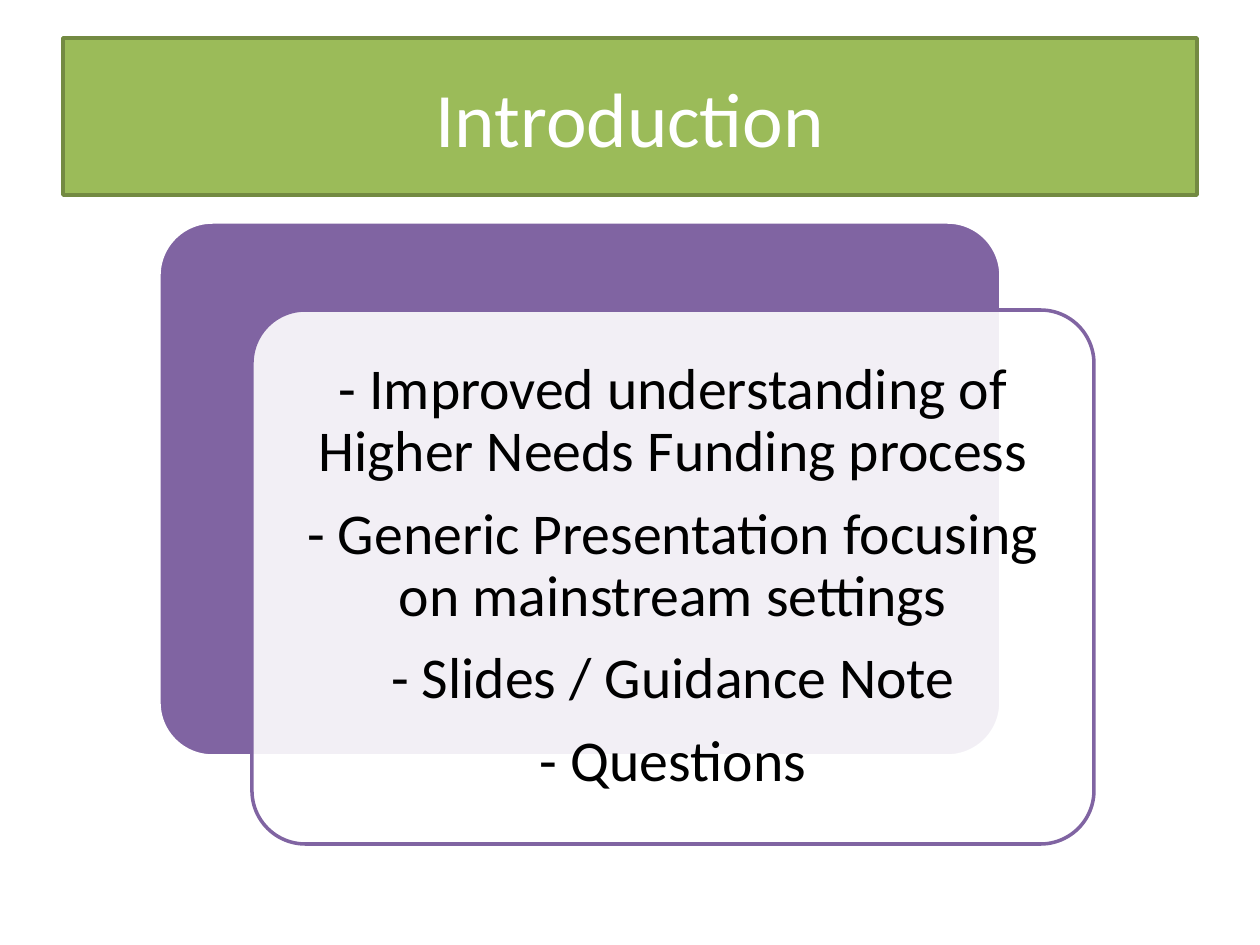
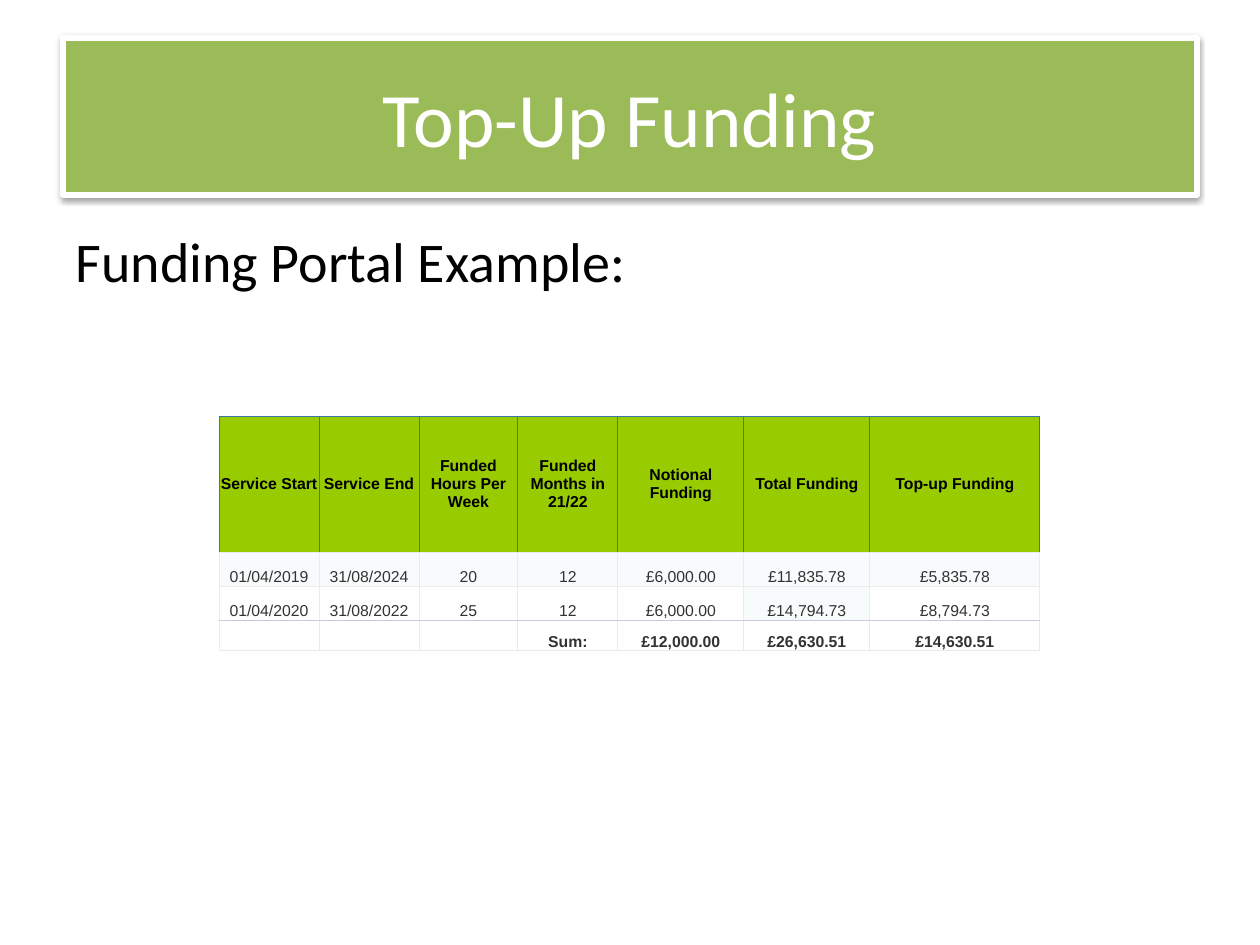
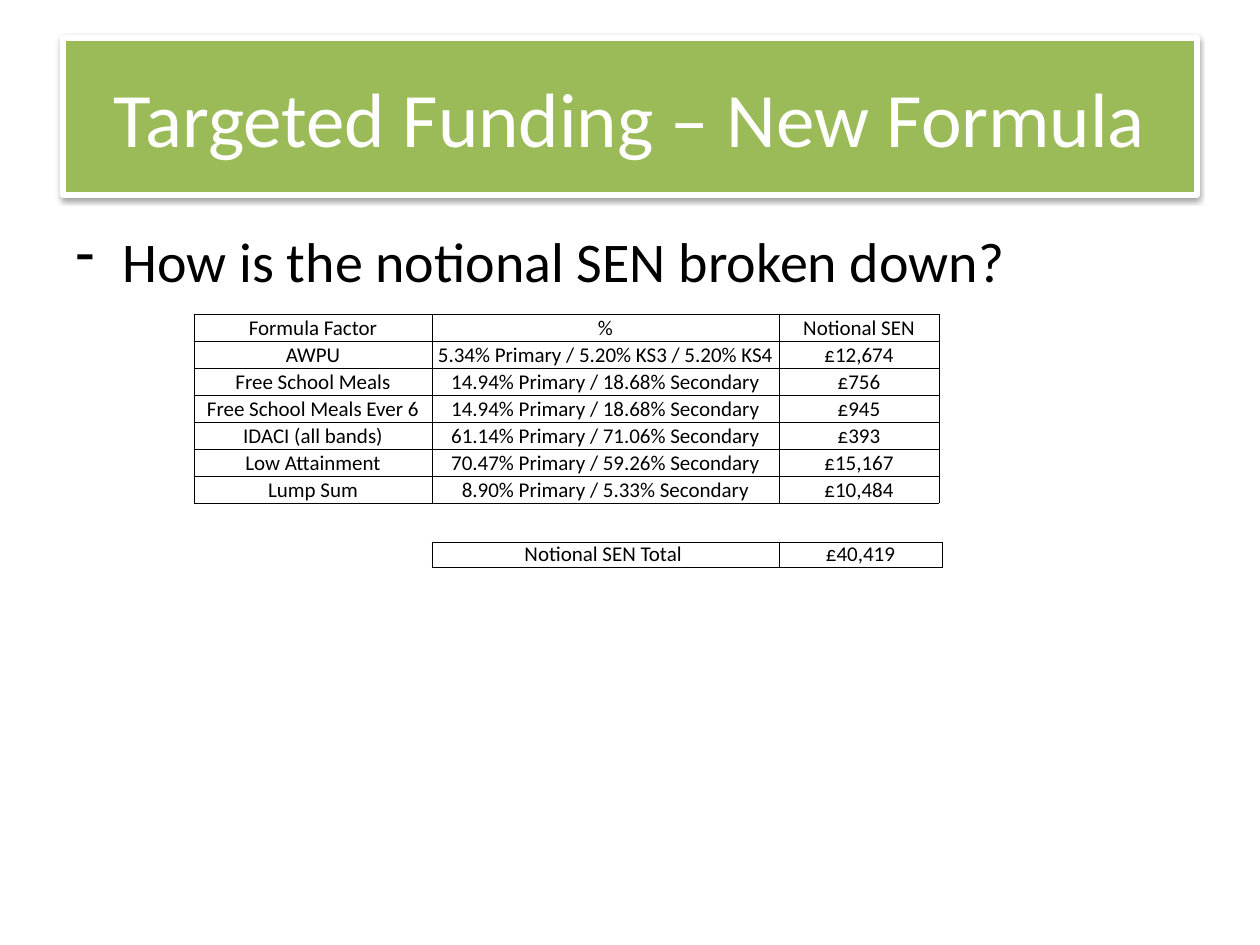
from dataclasses import dataclass

from lxml import etree
from pptx import Presentation
from pptx.dml.color import RGBColor
from pptx.enum.shapes import MSO_SHAPE
from pptx.enum.text import MSO_ANCHOR, MSO_AUTO_SIZE, PP_ALIGN
from pptx.oxml.ns import qn
from pptx.util import Emu, Pt

ROUNDED = MSO_SHAPE.ROUNDED_RECTANGLE
MIDDLE, BOTTOM = MSO_ANCHOR.MIDDLE, MSO_ANCHOR.BOTTOM
CENTER = PP_ALIGN.CENTER
NO_AUTOFIT = MSO_AUTO_SIZE.NONE

# Shared look
PX_PER_INCH = 126
LAYOUT_LIST = 1
TITLE_BOX = (63, 38, 1134, 157)
BODY_BOX = (63, 220, 1134, 624)
HANGING_INDENT = 47
COLORS = {
    "white": "FFFFFF",
    "black": "000000",
    "band": "9BBB59",
    "band_edge": "738A42",
    "purple": "8064A2",
    "header": "99CC00",
    "header_edge": "3877A6",
    "tint": "F8FBFC",
    "grid": "EBEBEB",
    "sum_edge": "CAC9D9",
    "figures": "333333",
}


@dataclass(frozen=True)
class Card:
    box: tuple[int, int, int, int]
    fill: str
    line: str
    opacity: int = 100


@dataclass(frozen=True)
class RowStyle:
    font: str
    size: int
    color: str
    edges: tuple[str, str, str, str]  # left, right, top, bottom
    fill: str | None = None
    bold: bool = False
    anchor: MSO_ANCHOR = BOTTOM


@dataclass(frozen=True)
class TableSpec:
    left: int
    top: int
    widths: tuple[int, ...]
    heights: tuple[int, ...]
    rows: list[tuple[str, ...]]
    styles: list[RowStyle]


def px(length: int) -> Emu:
    return Emu(round(length * 914400 / PX_PER_INCH))


def rgb(name: str) -> RGBColor:
    return RGBColor.from_string(COLORS[name])


def place(shape, box: tuple[int, int, int, int]) -> None:
    shape.left, shape.top, shape.width, shape.height = map(px, box)


def format_runs(paragraph, font: str, size: int, color: str, bold: bool = False) -> None:
    for run in paragraph.runs:
        run.font.name = font
        run.font.size = Pt(size)
        run.font.bold = bold
        run.font.color.rgb = rgb(color)


def set_line(shape, color: str, width: int) -> None:
    shape.line.color.rgb = rgb(color)
    shape.line.width = Pt(width)


def add_color(parent, color: str, opacity: int = 100) -> None:
    element = etree.SubElement(parent, qn("a:srgbClr"), val=COLORS[color])
    if opacity < 100:
        etree.SubElement(element, qn("a:alpha"), val=str(opacity * 1000))


# Titles and lists
def add_shadow(shape) -> None:
    effects = etree.SubElement(shape.element.spPr, qn("a:effectLst"))
    shadow = etree.SubElement(
        effects, qn("a:outerShdw"), blurRad=str(Pt(3.1)), dist=str(Pt(1.6)),
        dir="5400000", rotWithShape="0")
    add_color(shadow, "black", 38)


def add_titled_slide(presentation, title: str, raised: bool = True):
    slide = presentation.slides.add_slide(presentation.slide_layouts[LAYOUT_LIST])
    band = slide.shapes.title
    place(band, TITLE_BOX)
    band.fill.solid()
    band.fill.fore_color.rgb = rgb("band")
    if raised:
        set_line(band, "white", 3)
        add_shadow(band)
    else:
        set_line(band, "band_edge", 2)
    band.text_frame.text = title
    band.text_frame.auto_size = NO_AUTOFIT
    band.text_frame.vertical_anchor = MIDDLE
    paragraph = band.text_frame.paragraphs[0]
    paragraph.alignment = CENTER
    format_runs(paragraph, "Calibri", 44, "white")
    return slide


def fill_body(slide, lines: list[str], box: tuple[int, int, int, int] = BODY_BOX,
              size: int = 32, bullet: str = ""):
    body = slide.placeholders[1]
    place(body, box)
    body.text_frame.text = "\n".join(lines)
    body.text_frame.auto_size = NO_AUTOFIT
    for paragraph in body.text_frame.paragraphs:
        format_runs(paragraph, "Calibri", size, "black")
        properties = paragraph._p.get_or_add_pPr()
        indent = px(HANGING_INDENT) if bullet else 0
        properties.set("marL", str(indent))
        properties.set("indent", str(-indent))
        if bullet:
            etree.SubElement(properties, qn("a:buFontTx"))
            etree.SubElement(properties, qn("a:buChar"), char=bullet)
        else:
            etree.SubElement(properties, qn("a:buNone"))
    return body


def add_card(slide, card: Card) -> None:
    shape = slide.shapes.add_shape(ROUNDED, *map(px, card.box))
    shape.adjustments[0] = 0.1
    shape.shadow.inherit = False
    shape.fill.solid()
    shape.fill.fore_color.rgb = rgb(card.fill)
    if card.opacity < 100:
        color = shape.element.spPr.find(qn("a:solidFill")).find(qn("a:srgbClr"))
        etree.SubElement(color, qn("a:alpha"), val=str(card.opacity * 1000))
    set_line(shape, card.line, 2)


# Tables
def set_edges(cell, edges: tuple[str, str, str, str]) -> None:
    properties = cell._tc.get_or_add_tcPr()
    for side, color in zip("LRTB", edges):
        line = etree.SubElement(properties, qn(f"a:ln{side}"), w=str(Pt(0.5)))
        add_color(etree.SubElement(line, qn("a:solidFill")), color)


def fill_cell(cell, text: str, style: RowStyle) -> None:
    cell.margin_left = cell.margin_right = cell.margin_top = cell.margin_bottom = 0
    cell.vertical_anchor = style.anchor
    set_edges(cell, style.edges)
    if style.fill:
        cell.fill.solid()
        cell.fill.fore_color.rgb = rgb(style.fill)
    else:
        cell.fill.background()
    paragraph = cell.text_frame.paragraphs[0]
    paragraph.alignment = CENTER
    if text:
        paragraph.text = text
        format_runs(paragraph, style.font, style.size, style.color, style.bold)
    else:
        etree.SubElement(paragraph._p, qn("a:endParaRPr"), sz=str(style.size * 100))


def add_grid(slide, spec: TableSpec):
    frame = slide.shapes.add_table(
        len(spec.heights), len(spec.widths), px(spec.left), px(spec.top),
        px(sum(spec.widths)), px(sum(spec.heights)))
    table = frame.table
    table.first_row = table.horz_banding = False
    for column, width in zip(table.columns, spec.widths):
        column.width = px(width)
    for row, height, texts, style in zip(table.rows, spec.heights, spec.rows, spec.styles):
        row.height = px(height)
        for cell, text in zip(row.cells, texts):
            fill_cell(cell, text, style)
    return table


# Slides
def build_introduction(presentation) -> None:
    slide = add_titled_slide(presentation, "Introduction", raised=False)
    add_card(slide, Card((159, 222, 842, 534), "purple", "white"))
    add_card(slide, Card((252, 310, 842, 534), "white", "purple", opacity=90))
    topics = fill_body(slide, [
        "- Improved understanding of Higher Needs Funding process",
        "- Generic Presentation focusing on mainstream settings",
        "- Slides / Guidance Note",
        "- Questions",
    ], box=(268, 325, 810, 503), size=33)
    frame = topics.text_frame
    frame.vertical_anchor = MIDDLE
    frame.margin_left = frame.margin_right = px(18)
    frame.margin_top = frame.margin_bottom = px(18)
    for paragraph in frame.paragraphs:
        paragraph.alignment = CENTER
        paragraph.line_spacing = 0.9
        paragraph.space_before = Pt(0)
        paragraph.space_after = Pt(11.5)
    # The list stands in front of the cards
    topics.element.getparent().append(topics.element)


def build_top_up(presentation) -> None:
    slide = add_titled_slide(presentation, "Top-Up Funding")
    fill_body(slide, ["Funding Portal Example:"])
    blue, grid, total = "header_edge", "grid", "sum_edge"
    services = add_grid(slide, TableSpec(
        219, 416, (100, 100, 99, 100, 126, 126, 170), (136, 34, 34, 31),
        [
            ("Service Start", "Service End", "Funded Hours Per Week",
             "Funded Months in 21/22", "Notional Funding", "Total Funding",
             "Top-up Funding"),
            ("01/04/2019", "31/08/2024", "20", "12",
             "£6,000.00", "£11,835.78", "£5,835.78"),
            ("01/04/2020", "31/08/2022", "25", "12",
             "£6,000.00", "£14,794.73", "£8,794.73"),
            ("", "", "", "Sum:", "£12,000.00", "£26,630.51", "£14,630.51"),
        ],
        [
            RowStyle("Arial", 9, "black", (blue, blue, blue, grid), "header", True, MIDDLE),
            RowStyle("Arial", 9, "figures", (grid, grid, grid, grid), "tint"),
            RowStyle("Arial", 9, "figures", (grid, grid, grid, total), "white"),
            RowStyle("Arial", 9, "figures", (grid, grid, total, grid), "white", True),
        ]))
    services.cell(2, 5).fill.fore_color.rgb = rgb("tint")


def build_new_formula(presentation) -> None:
    slide = add_titled_slide(presentation, "Targeted Funding – New Formula")
    fill_body(slide, ["How is the notional SEN broken down?"], bullet="-")
    plain = RowStyle("Calibri", 12, "black", ("black",) * 4)
    factors = [
        ("Formula Factor", "%", "Notional SEN"),
        ("AWPU", "5.34% Primary / 5.20% KS3 / 5.20% KS4", "£12,674"),
        ("Free School Meals", "14.94% Primary / 18.68% Secondary", "£756"),
        ("Free School Meals Ever 6", "14.94% Primary / 18.68% Secondary", "£945"),
        ("IDACI (all bands)", "61.14% Primary / 71.06% Secondary", "£393"),
        ("Low Attainment", "70.47% Primary / 59.26% Secondary", "£15,167"),
        ("Lump Sum", "8.90% Primary / 5.33% Secondary", "£10,484"),
    ]
    count = len(factors)
    add_grid(slide, TableSpec(
        194, 314, (238, 347, 160), (27,) * count, factors, [plain] * count))
    add_grid(slide, TableSpec(
        432, 542, (347, 163), (25,), [("Notional SEN Total ", "£40,419")], [plain]))


def main() -> None:
    presentation = Presentation()
    presentation.slide_width, presentation.slide_height = px(1260), px(945)
    build_introduction(presentation)
    build_top_up(presentation)
    build_new_formula(presentation)
    presentation.save("out.pptx")


if __name__ == "__main__":
    main()
